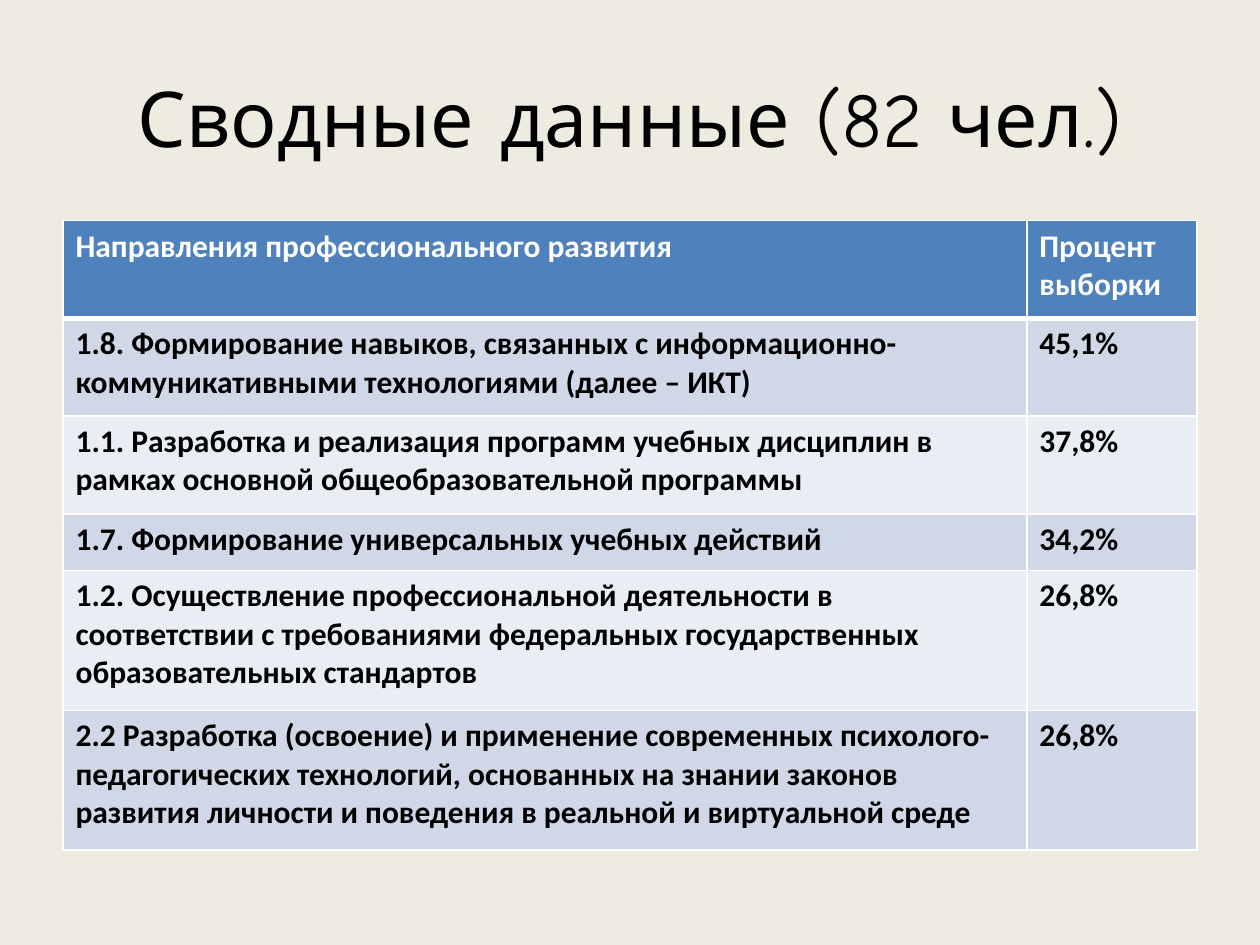
from dataclasses import dataclass

from lxml.etree import SubElement
from pptx import Presentation
from pptx.dml.color import RGBColor
from pptx.enum.text import MSO_VERTICAL_ANCHOR as Anchor, PP_PARAGRAPH_ALIGNMENT as Align
from pptx.oxml.ns import qn
from pptx.util import Cm, Pt


@dataclass(frozen=True)
class Theme:
    background: str = "EEECE1"
    text: str = "000000"
    header_text: str = "FFFFFF"
    header_fill: str = "4F81BD"
    row_fills: tuple = ("D0D8E8", "E9EDF4")
    border: str = "FFFFFF"
    border_width: float = 1
    header_border_width: float = 3
    title_font: str = "Comic Neue"
    table_font: str = "Calibri"
    title_size: float = 44
    table_size: float = 18


@dataclass(frozen=True)
class Box:
    left: float
    top: float
    width: float
    height: float

    def lengths(self):
        return Cm(self.left), Cm(self.top), Cm(self.width), Cm(self.height)


THEME = Theme()
TITLE = "Сводные данные (82 чел.)"
HEADER = ("Направления профессионального развития", "Процент выборки")
DIRECTIONS = (
    ("1.8. Формирование навыков, связанных с информационно-коммуникативными "
     "технологиями (далее – ИКТ)", "45,1%"),
    ("1.1. Разработка и реализация программ учебных дисциплин в рамках основной "
     "общеобразовательной программы", "37,8%"),
    ("1.7. Формирование универсальных учебных действий", "34,2%"),
    ("1.2. Осуществление профессиональной деятельности в соответствии с требованиями "
     "федеральных государственных образовательных стандартов", "26,8%"),
    ("2.2 Разработка (освоение) и применение современных психолого-педагогических "
     "технологий, основанных на знании законов развития личности и поведения "
     "в реальной и виртуальной среде", "26,8%"),
)
ROW_LINES = (2, 2, 2, 1, 3, 3)
ROW_HEIGHTS = {1: 1.14, 2: 1.97, 3: 2.82}
FIRST_COLUMN_SHARE = 0.85


def format_text(text_frame, font_name, size, color, bold=False):
    for paragraph in text_frame.paragraphs:
        for run in paragraph.runs:
            run.font.name = font_name
            run.font.size = Pt(size)
            run.font.bold = bold
            run.font.color.rgb = RGBColor.from_string(color)


def add_borders(cell, widths):
    properties = cell._tc.get_or_add_tcPr()
    for position, (side, width) in enumerate(widths.items()):
        line = SubElement(properties, qn(f"a:ln{side}"), w=str(Pt(width)))
        fill = SubElement(line, qn("a:solidFill"))
        SubElement(fill, qn("a:srgbClr"), val=THEME.border)
        properties.insert(position, line)


def format_cell(cell, text, fill, color, widths):
    cell.text_frame.text = text
    format_text(cell.text_frame, THEME.table_font, THEME.table_size, color, bold=True)
    cell.fill.solid()
    cell.fill.fore_color.rgb = RGBColor.from_string(fill)
    add_borders(cell, widths)


def place_title(slide, box):
    title = slide.shapes.title
    title.left, title.top, title.width, title.height = box.lengths()
    title.text_frame.text = TITLE
    title.text_frame.vertical_anchor = Anchor.MIDDLE
    title.text_frame.paragraphs[0].alignment = Align.CENTER
    format_text(title.text_frame, THEME.title_font, THEME.title_size, THEME.text)


def place_summary_table(slide, box):
    rows = (HEADER, *DIRECTIONS)
    table = slide.shapes.add_table(len(rows), len(HEADER), *box.lengths()).table
    for column, share in zip(table.columns, (FIRST_COLUMN_SHARE, 1 - FIRST_COLUMN_SHARE)):
        column.width = Cm(box.width * share)
    for index, (texts, lines) in enumerate(zip(rows, ROW_LINES)):
        table.rows[index].height = Cm(ROW_HEIGHTS[lines])
        widths = dict.fromkeys("LRTB", THEME.border_width)
        if index == 0:
            fill, color = THEME.header_fill, THEME.header_text
            widths["B"] = THEME.header_border_width
        else:
            fill, color = THEME.row_fills[(index - 1) % 2], THEME.text
            if index == 1:
                widths["T"] = THEME.header_border_width
        for column, text in enumerate(texts):
            format_cell(table.cell(index, column), text, fill, color, widths)


def main():
    presentation = Presentation()
    presentation.slide_width, presentation.slide_height = Cm(25.4), Cm(19.05)
    slide = presentation.slides.add_slide(presentation.slide_layouts[5])
    slide.background.fill.solid()
    slide.background.fill.fore_color.rgb = RGBColor.from_string(THEME.background)
    place_title(slide, Box(1.27, 0.76, 22.86, 3.18))
    place_summary_table(slide, Box(1.27, 4.45, 22.86, 12.69))
    presentation.save("out.pptx")


if __name__ == "__main__":
    main()
